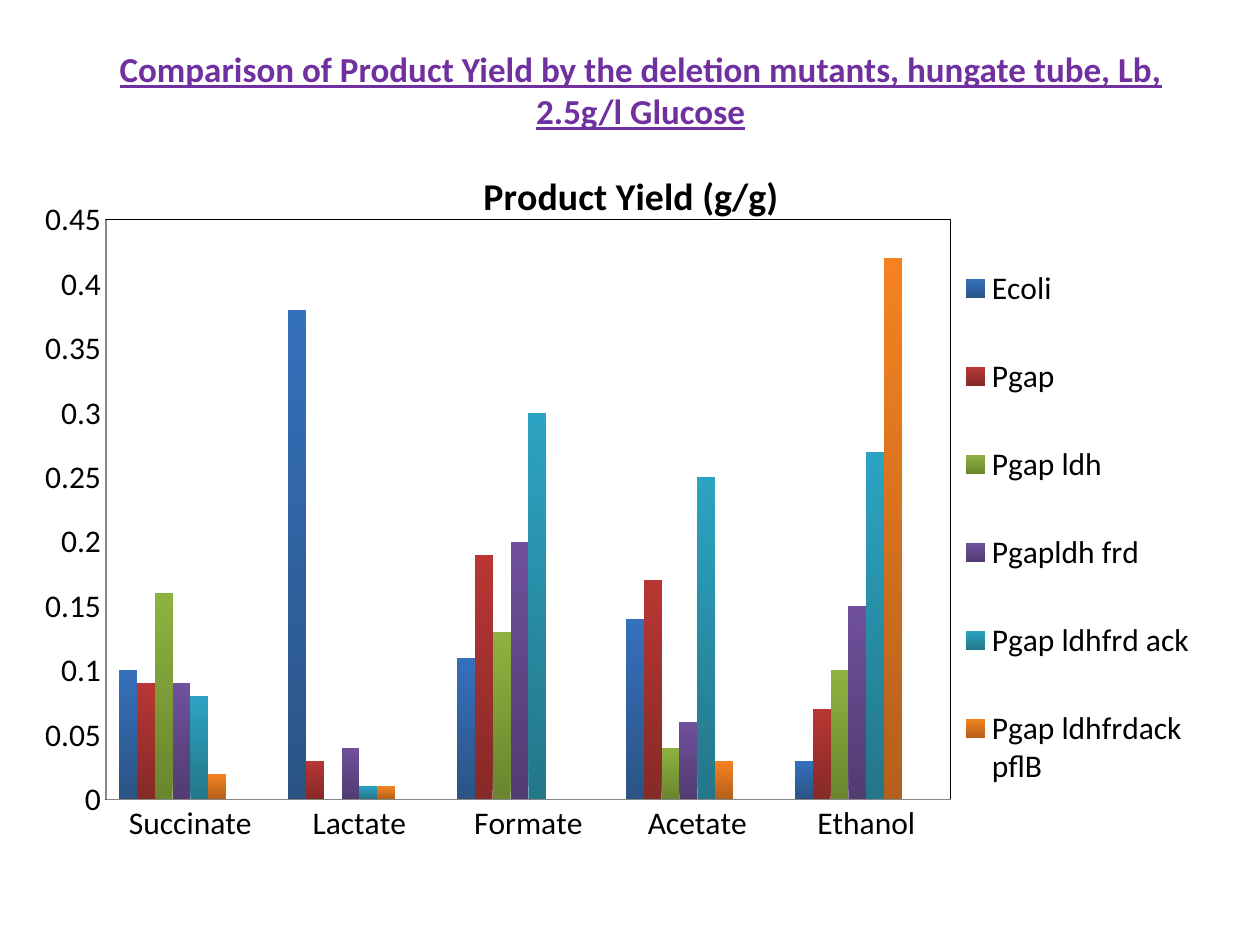
from dataclasses import dataclass

from lxml.etree import SubElement
from pptx import Presentation
from pptx.chart.data import CategoryChartData
from pptx.dml.color import RGBColor
from pptx.enum.chart import XL_CHART_TYPE, XL_LEGEND_POSITION, XL_TICK_MARK
from pptx.enum.text import MSO_AUTO_SIZE, PP_ALIGN
from pptx.oxml import parse_xml
from pptx.oxml.ns import nsdecls, qn
from pptx.util import Inches, Pt


@dataclass(frozen=True)
class Theme:
    """Colours and type sizes of the slide."""
    font: str = "Calibri"
    heading: str = "7030A0"
    text: str = "000000"
    axis: str = "868686"
    heading_size: float = 20
    chart_title_size: float = 21.6
    chart_size: float = 18


THEME = Theme()
PRODUCTS = ["Succinate", "Lactate", "Formate", "Acetate", "Ethanol"]
STRAINS = [
    ("Ecoli", [0.1, 0.38, 0.11, 0.14, 0.03], "2B5485", "3570BC"),
    ("Pgap", [0.09, 0.03, 0.19, 0.17, 0.07], "862A28", "B83633"),
    ("Pgap ldh", [0.16, 0, 0.13, 0.04, 0.1], "69862E", "8DB23F"),
    ("Pgapldh frd", [0.09, 0.04, 0.2, 0.06, 0.15], "523C72", "70509B"),
    ("Pgap ldhfrd ack", [0.08, 0.01, 0.3, 0.25, 0.27], "247689", "2CA3C2"),
    ("Pgap ldhfrdack pflB", [0.02, 0.01, 0, 0.03, 0.42], "B4601C", "F58220"),
]
EMPTY_STRAINS = ["Series 7", "Series 8"]


def style_font(font, size, color, bold=False):
    """Apply the theme face with a size, colour and weight."""
    font.name = THEME.font
    font.size = Pt(size)
    font.bold = bold
    font.color.rgb = RGBColor.from_string(color)


def set_layout(element, index, **fractions):
    """Place a chart part by fractions of the chart area."""
    for previous in element.findall(qn("c:layout")):
        element.remove(previous)
    layout = parse_xml(f"<c:layout {nsdecls('c')}/>")
    manual = SubElement(layout, qn("c:manualLayout"))
    if element.tag == qn("c:plotArea"):
        SubElement(manual, qn("c:layoutTarget")).set("val", "inner")
    for side in ("x", "y"):
        SubElement(manual, qn(f"c:{side}Mode")).set("val", "edge")
    for key, fraction in fractions.items():
        SubElement(manual, qn(f"c:{key}")).set("val", str(fraction))
    element.insert(index, layout)


def add_heading(slide, left, top, width, height):
    """Add the underlined slide heading."""
    heading = slide.shapes.add_textbox(left, top, width, height)
    frame = heading.text_frame
    frame.word_wrap = True
    frame.auto_size = MSO_AUTO_SIZE.SHAPE_TO_FIT_TEXT
    paragraph = frame.paragraphs[0]
    paragraph.alignment = PP_ALIGN.CENTER
    run = paragraph.add_run()
    run.text = ("Comparison of Product Yield by the deletion mutants, "
                "hungate tube, Lb, 2.5g/l Glucose")
    style_font(run.font, THEME.heading_size, THEME.heading, bold=True)
    run.font.underline = True


def style_axes(chart):
    """Set the scale, lines and ticks of both axes."""
    yields = chart.value_axis
    yields.minimum_scale, yields.maximum_scale = 0, 0.45
    yields.major_unit = 0.05
    yields.has_major_gridlines = False
    yields.tick_labels.number_format = "General"
    yields.tick_labels.number_format_is_linked = False
    for axis in (yields, chart.category_axis):
        axis.major_tick_mark = axis.minor_tick_mark = XL_TICK_MARK.NONE
        axis.format.line.color.rgb = RGBColor.from_string(THEME.axis)
        axis.format.line.width = Pt(0.75)


def style_legend(chart):
    """Place the legend at the right and hide the empty strains."""
    chart.has_legend = True
    legend = chart.legend
    legend.position = XL_LEGEND_POSITION.RIGHT
    legend.include_in_layout = False
    element = legend._element
    set_layout(element, 1, x=0.77, y=0.1, w=0.21, h=0.85)
    for offset in range(len(EMPTY_STRAINS)):
        entry = parse_xml(
            f'<c:legendEntry {nsdecls("c")}><c:idx val="{len(STRAINS) + offset}"/>'
            '<c:delete val="1"/></c:legendEntry>')
        element.insert(1 + offset, entry)


def add_yield_chart(slide, left, top, width, height):
    """Add the clustered columns of product yield by strain."""
    data = CategoryChartData()
    data.categories = PRODUCTS
    for name, yields, _, _ in STRAINS:
        data.add_series(name, yields)
    for name in EMPTY_STRAINS:
        data.add_series(name, [None] * len(PRODUCTS))
    chart = slide.shapes.add_chart(
        XL_CHART_TYPE.COLUMN_CLUSTERED, left, top, width, height, data).chart
    style_font(chart.font, THEME.chart_size, THEME.text)

    chart.has_title = True
    title = chart.chart_title
    run = title.text_frame.paragraphs[0].add_run()
    run.text = " Product Yield (g/g)"
    style_font(run.font, THEME.chart_title_size, THEME.text, bold=True)
    set_layout(title._element, 1, x=0.37, y=0.02)

    plot = chart.plots[0]
    plot.vary_by_categories = False
    plot.gap_width = 150
    plot.overlap = 0
    for series, (_, _, base, tip) in zip(plot.series, STRAINS):
        series.invert_if_negative = False
        fill = series.format.fill
        fill.gradient()
        fill.gradient_angle = 90
        for stop, color in zip(fill.gradient_stops, (base, tip)):
            stop.color.rgb = RGBColor.from_string(color)

    style_axes(chart)
    style_legend(chart)
    plot_area = chart._chartSpace.chart.plotArea
    set_layout(plot_area, 0, x=0.07, y=0.1, w=0.7, h=0.8)
    plot_area.append(parse_xml(
        f'<c:spPr {nsdecls("c", "a")}><a:noFill/><a:ln w="{Pt(0.75)}"><a:solidFill>'
        f'<a:srgbClr val="{THEME.text}"/></a:solidFill></a:ln></c:spPr>'))


def main():
    """Build and save the slide."""
    deck = Presentation()
    deck.slide_width, deck.slide_height = Inches(10), Inches(7.5)
    slide = deck.slides.add_slide(deck.slide_layouts[6])
    add_yield_chart(slide, Inches(0.17), Inches(1.17), Inches(9.58), Inches(5.75))
    add_heading(slide, Inches(0.5), Inches(0.33), Inches(9.17), Inches(0.77))
    deck.save("out.pptx")


if __name__ == "__main__":
    main()
